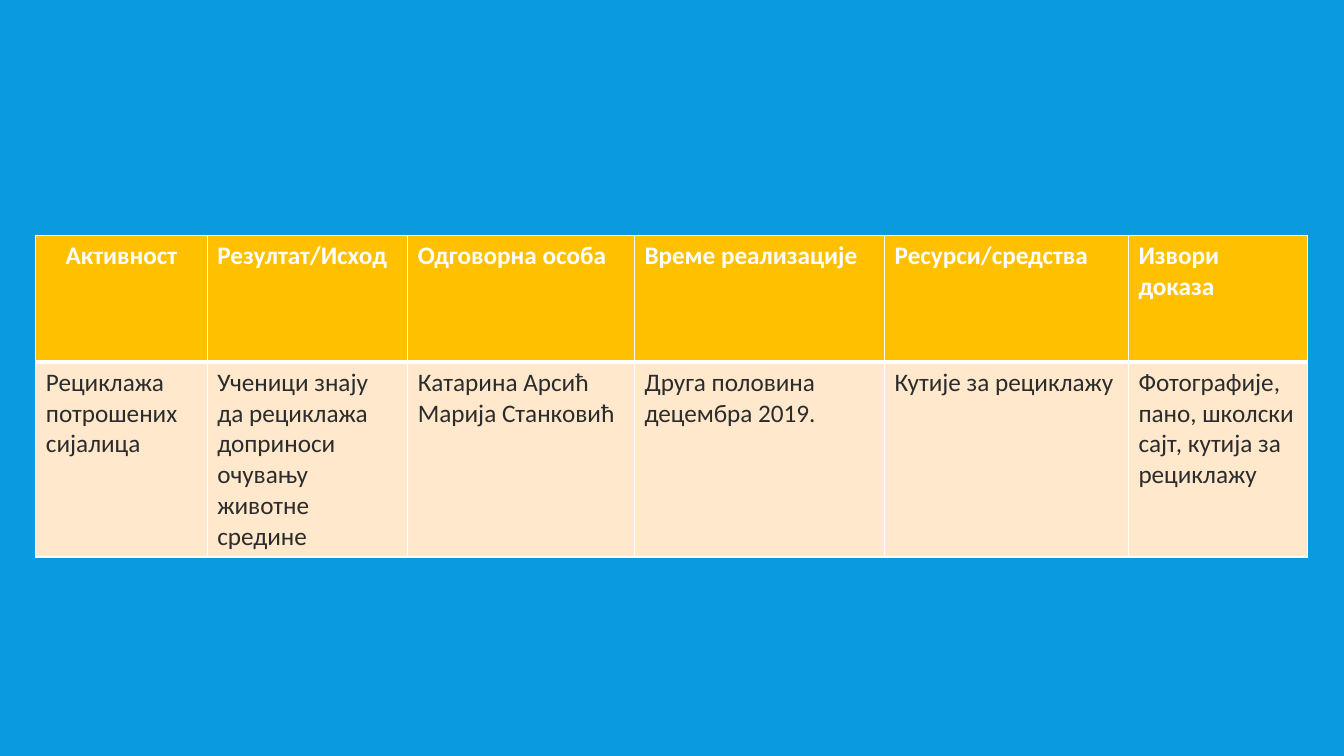
from lxml import etree
from pptx import Presentation
from pptx.dml.color import RGBColor
from pptx.enum.text import PP_ALIGN
from pptx.oxml.ns import qn
from pptx.util import Pt

CENTER, LEFT = PP_ALIGN.CENTER, PP_ALIGN.LEFT
BLUE, AMBER, PEACH = "099BDD", "FFC000", "FFE8CC"
WHITE, DARK = "FFFFFF", "2C2C2C"

COL_WIDTHS = [122.4, 143.28, 162, 178.56, 174.24, 128.16]
ROW_HEIGHTS = [90.3, 139]
HEADINGS = ["Активност", "Резултат/Исход", "Одговорна особа",
            "Време реализације", "Ресурси/средства", "Извори доказа"]
ACTIVITY = [
    "Рециклажа потрошених сијалица",
    "Ученици знају да рециклажа доприноси очувању животне средине",
    "Катарина Арсић\nМарија Станковић",
    "Друга половина децембра 2019.",
    "Кутије за рециклажу",
    "Фотографије, пано, школски сајт, кутија за рециклажу",
]


def rgb(value):
    return RGBColor.from_string(value)


def add_border(cell, side, width):
    tcPr = cell._tc.get_or_add_tcPr()
    ln = etree.SubElement(tcPr, qn(f"a:ln{side}"), w=str(Pt(width)))
    fill = etree.SubElement(ln, qn("a:solidFill"))
    etree.SubElement(fill, qn("a:srgbClr"), val=WHITE)


def format_cell(cell, text, is_header, align):
    # Borders go before the fill; a thick rule parts the header from the body
    widths = {"L": 1, "R": 1, "T": 1, "B": 3} if is_header else {
        "L": 1, "R": 1, "T": 3, "B": 1}
    for side, width in widths.items():
        add_border(cell, side, width)
    cell.fill.solid()
    cell.fill.fore_color.rgb = rgb(AMBER if is_header else PEACH)

    cell.text_frame.text = text
    for p in cell.text_frame.paragraphs:
        p.alignment = align
        p.font.name = "Calibri"
        p.font.size = Pt(18)
        p.font.bold = is_header
        p.font.color.rgb = rgb(WHITE if is_header else DARK)


def add_activity_table(s, left, top):
    rows = [HEADINGS, ACTIVITY]
    table = s.shapes.add_table(len(rows), len(HEADINGS), Pt(left), Pt(top),
                               Pt(sum(COL_WIDTHS)), Pt(sum(ROW_HEIGHTS))).table
    for column, width in zip(table.columns, COL_WIDTHS):
        column.width = Pt(width)
    for row, height in zip(table.rows, ROW_HEIGHTS):
        row.height = Pt(height)
    for i, texts in enumerate(rows):
        for j, text in enumerate(texts):
            align = CENTER if i == j == 0 else LEFT
            format_cell(table.cell(i, j), text, i == 0, align)


def main():
    prs = Presentation()
    prs.slide_width, prs.slide_height = Pt(960), Pt(540)
    s = prs.slides.add_slide(prs.slide_layouts[6])

    # Background
    s.background.fill.solid()
    s.background.fill.fore_color.rgb = rgb(BLUE)

    # Activity plan
    add_activity_table(s, 25.6, 168.48)
    prs.save("out.pptx")


if __name__ == "__main__":
    main()
